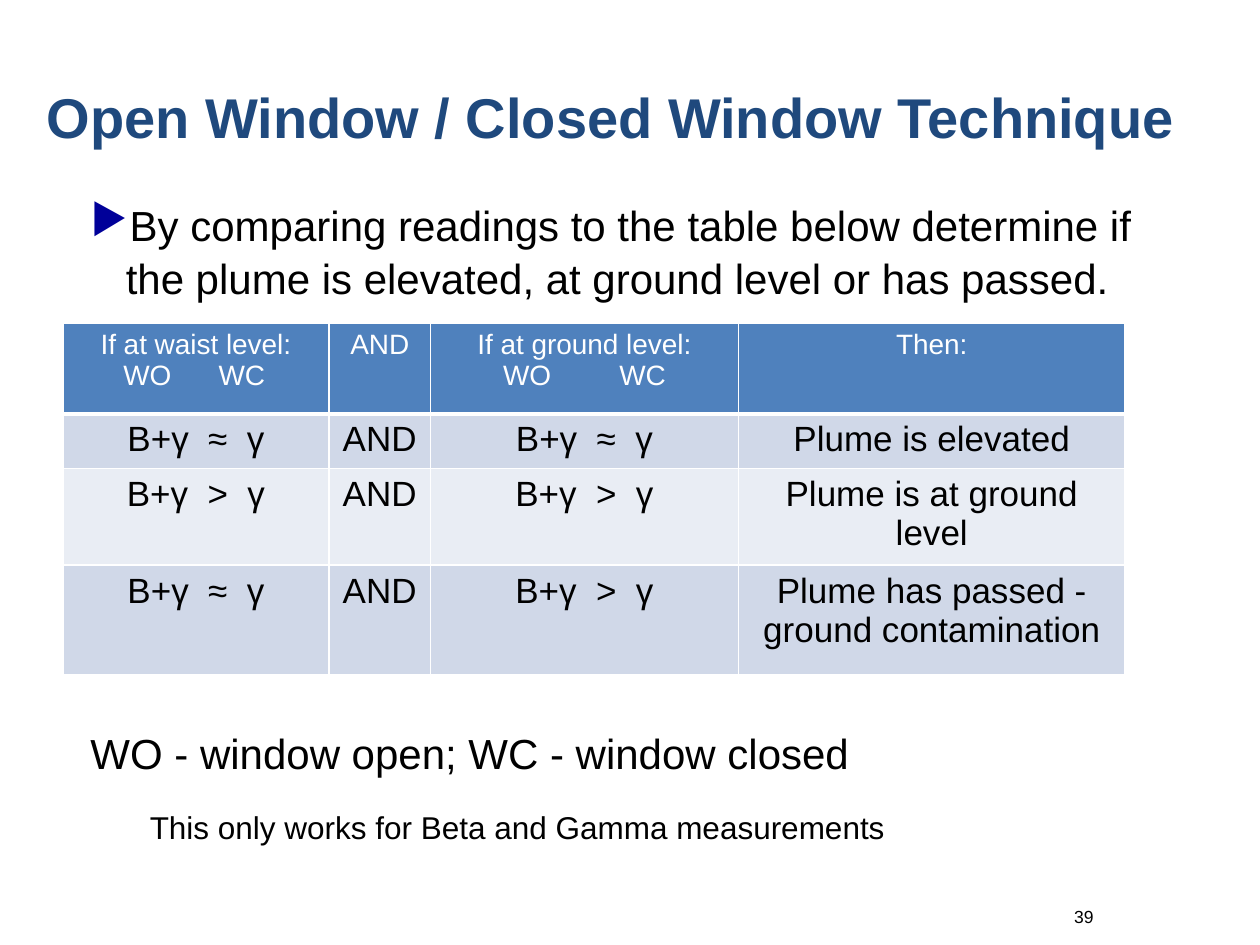
from lxml import etree
from pptx import Presentation
from pptx.dml.color import RGBColor
from pptx.enum.text import MSO_ANCHOR, PP_ALIGN
from pptx.oxml.ns import qn
from pptx.util import Pt

LEFT, CENTER, RIGHT = PP_ALIGN.LEFT, PP_ALIGN.CENTER, PP_ALIGN.RIGHT
TOP, MIDDLE, BOTTOM = MSO_ANCHOR.TOP, MSO_ANCHOR.MIDDLE, MSO_ANCHOR.BOTTOM
FONT = "Arial"
BLACK = RGBColor(0, 0, 0)
WHITE = RGBColor(255, 255, 255)
NAVY = RGBColor(0x1F, 0x49, 0x7D)
BULLET_BLUE = RGBColor(0, 0, 0x99)
HEADER_FILL = RGBColor(0x4F, 0x81, 0xBD)
BAND_FILLS = (RGBColor(0xD0, 0xD8, 0xE8), RGBColor(0xE9, 0xED, 0xF4))

TITLE = "Open Window / Closed Window Technique"
INTRO = ("By comparing readings to the table below determine if "
         "the plume is elevated, at ground level or has passed.")
LEGEND = "WO - window open; WC - window closed"
NOTE = "This only works for Beta and Gamma measurements"
PAGE_NUMBER = "39"

ROWS = [
    ("If at waist level:\n\tWO\tWC", "AND", "If at ground level:\n\tWO\tWC", "Then:"),
    ("Β+γ  ≈  γ", "AND", "Β+γ  ≈  γ", "Plume is elevated"),
    ("Β+γ  >  γ", "AND", "Β+γ  >  γ", "Plume is at ground level"),
    ("Β+γ  ≈  γ", "AND", "Β+γ  >  γ", "Plume has passed - ground contamination"),
]
COLUMN_WIDTHS = (152, 58, 176, 221)
ROW_HEIGHTS = (52, 27.5, 46, 62.5)
READING_TABS = {0: (41, 95), 2: (48, 114)}  # centres of WO and WC by column


def style(paragraph, size, color, align=LEFT, bold=False):
    paragraph.alignment = align
    font = paragraph.font
    font.name, font.size, font.bold = FONT, Pt(size), bold
    font.color.rgb = color


def add_text(page, text, left, top, width, height, size, align=LEFT, anchor=TOP):
    box = page.shapes.add_textbox(Pt(left), Pt(top), Pt(width), Pt(height))
    frame = box.text_frame
    frame.word_wrap = True
    frame.vertical_anchor = anchor
    frame.text = text
    style(frame.paragraphs[0], size, BLACK, align)
    return frame.paragraphs[0]


def add_bullet(paragraph, character, color, margin, hanging):
    properties = paragraph._p.get_or_add_pPr()
    properties.set("marL", str(Pt(margin)))
    properties.set("indent", str(-Pt(hanging)))
    bullet_color = etree.Element(qn("a:buClr"))
    etree.SubElement(bullet_color, qn("a:srgbClr"), val=str(color))
    bullet = etree.Element(qn("a:buChar"), char=character)
    default_run = properties.find(qn("a:defRPr"))
    for element in (bullet_color, bullet):
        default_run.addprevious(element)


def add_center_tabs(paragraph, positions):
    tabs = etree.SubElement(paragraph._p.get_or_add_pPr(), qn("a:tabLst"))
    for position in positions:
        etree.SubElement(tabs, qn("a:tab"), pos=str(Pt(position)), algn="ctr")


def set_borders(cell, bottom_width):
    properties = cell._tc.get_or_add_tcPr()
    widths = {"a:lnL": 1, "a:lnR": 1, "a:lnT": 1, "a:lnB": bottom_width}
    for index, (tag, width) in enumerate(widths.items()):
        line = etree.Element(qn(tag), w=str(Pt(width)))
        fill = etree.SubElement(line, qn("a:solidFill"))
        etree.SubElement(fill, qn("a:srgbClr"), val=str(WHITE))
        properties.insert(index, line)


def add_readings_table(page, left, top):
    table = page.shapes.add_table(
        len(ROWS), len(COLUMN_WIDTHS), Pt(left), Pt(top),
        Pt(sum(COLUMN_WIDTHS)), Pt(sum(ROW_HEIGHTS))).table
    for column, width in zip(table.columns, COLUMN_WIDTHS):
        column.width = Pt(width)
    for row_index, texts in enumerate(ROWS):
        table.rows[row_index].height = Pt(ROW_HEIGHTS[row_index])
        header = row_index == 0
        for column_index, text in enumerate(texts):
            cell = table.cell(row_index, column_index)
            cell.text_frame.text = text
            cell.fill.solid()
            cell.fill.fore_color.rgb = HEADER_FILL if header else BAND_FILLS[(row_index - 1) % 2]
            set_borders(cell, 3 if header else 1)
            for paragraph in cell.text_frame.paragraphs:
                tabbed = "\t" in paragraph.text
                if tabbed:
                    add_center_tabs(paragraph, READING_TABS[column_index])
                style(paragraph, 16 if header else 20, WHITE if header else BLACK,
                      LEFT if tabbed else CENTER)


def main():
    deck = Presentation()
    deck.slide_width, deck.slide_height = Pt(720), Pt(540)
    page = deck.slides.add_slide(deck.slide_layouts[5])

    title = page.shapes.title
    title.left, title.top, title.width, title.height = Pt(14.4), Pt(21.6), Pt(669.6), Pt(90)
    title.text_frame.text = TITLE
    title.text_frame.vertical_anchor = MIDDLE
    style(title.text_frame.paragraphs[0], 32, NAVY, CENTER, bold=True)

    intro = add_text(page, INTRO, 36, 109, 648, 66, 24)
    intro.line_spacing = 1.05
    add_bullet(intro, "▶", BULLET_BLUE, margin=28.8, hanging=20)

    add_readings_table(page, 36, 184.5)
    add_text(page, LEGEND, 44.6, 412, 639.4, 36, 24)
    add_text(page, NOTE, 78.5, 458, 521.5, 29, 18)
    add_text(page, PAGE_NUMBER, 581, 504.5, 51, 29, 10, RIGHT, BOTTOM)
    deck.save("out.pptx")


if __name__ == "__main__":
    main()
